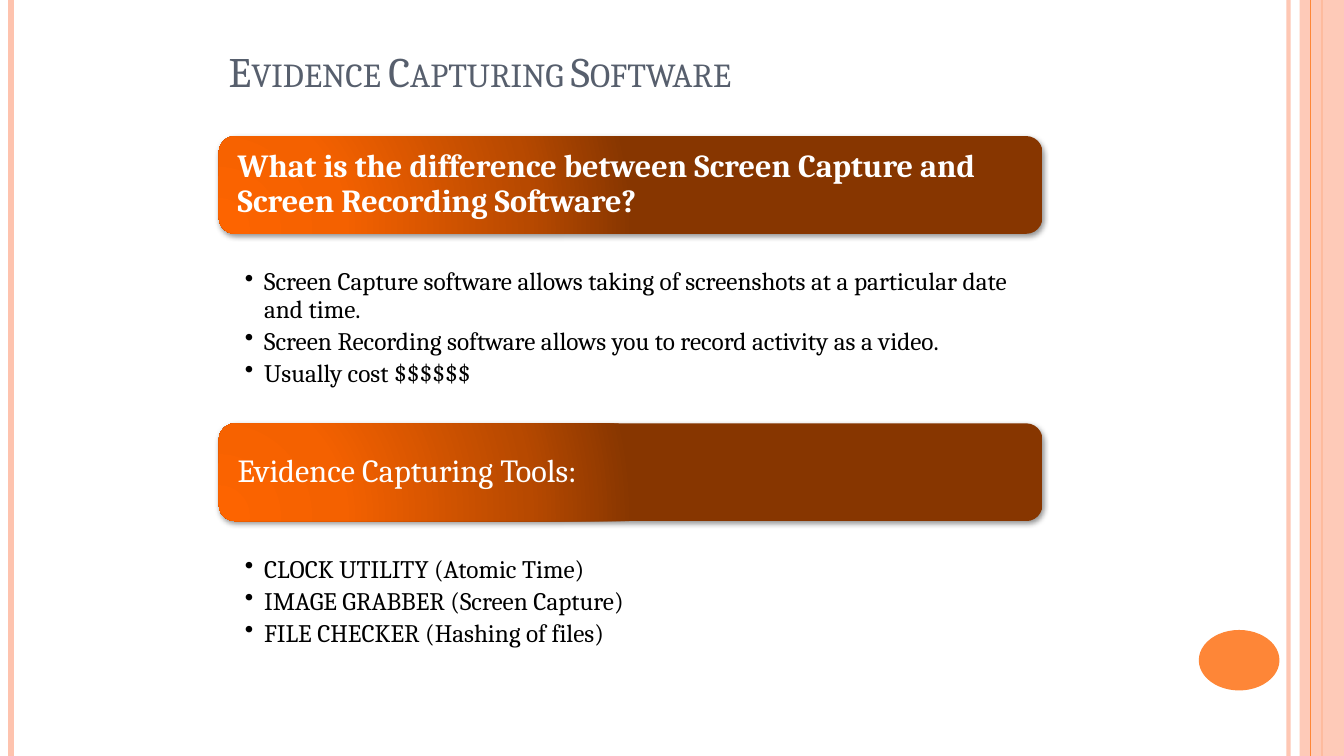
from lxml.etree import SubElement
from pptx import Presentation
from pptx.dml.color import RGBColor
from pptx.enum.shapes import MSO_CONNECTOR, MSO_SHAPE
from pptx.enum.text import MSO_ANCHOR, PP_ALIGN
from pptx.oxml import parse_xml
from pptx.oxml.ns import nsdecls, qn
from pptx.util import Pt

EMU_PER_PX = 9144  # 100 px to the inch
SLIDE_W, SLIDE_H = 1333, 750
COLUMN_LEFT, COLUMN_W = 217, 817
BANNER_H = 97
FONT = "Cambria"

PEACH = RGBColor(0xFE, 0xC3, 0xAE)
ORANGE = RGBColor(0xFE, 0x86, 0x37)
SLATE = RGBColor(0x57, 0x5F, 0x6D)
WHITE = RGBColor(0xFF, 0xFF, 0xFF)
BLACK = RGBColor(0x00, 0x00, 0x00)
BANNER_STOPS = [(0, "FD6400"), (30, "F46100"), (75, "B74900"), (100, "873600")]

SECTIONS = [
    (135, "What is the difference between Screen Capture and Screen Recording Software?", True, 187, [
        "Screen Capture software allows taking of screenshots at a particular date and time.",
        "Screen Recording software allows you to record activity as a video.",
        "Usually cost $$$$$$",
    ]),
    (420, "Evidence Capturing Tools:", False, 133, [
        "CLOCK UTILITY (Atomic Time)",
        "IMAGE GRABBER (Screen Capture)",
        "FILE CHECKER (Hashing of files)",
    ]),
]


def px(*lengths):
    return [length * EMU_PER_PX for length in lengths]


def set_alpha(fill_parent, percent):
    """Make the solid fill found under an element partly transparent."""
    color = fill_parent.find(qn("a:solidFill"))[0]
    SubElement(color, qn("a:alpha")).set("val", str(percent * 1000))


def set_insets(frame, left, top, right, bottom):
    frame.margin_left, frame.margin_top, frame.margin_right, frame.margin_bottom = px(
        left, top, right, bottom)


def style_paragraph(paragraph, size, color, bold=False):
    paragraph.alignment = PP_ALIGN.LEFT
    font = paragraph.font
    font.name, font.size, font.bold = FONT, Pt(size), bold
    font.color.rgb = color


def add_rule(slide, x, color, width, alpha=None):
    """Draw a full-height vertical line."""
    rule = slide.shapes.add_connector(MSO_CONNECTOR.STRAIGHT, *px(x, 0, x, SLIDE_H))
    rule.line.color.rgb = color
    rule.line.width = Pt(width)
    properties = rule._element.spPr
    SubElement(properties, qn("a:effectLst"))
    if alpha:
        set_alpha(properties.find(qn("a:ln")), alpha)


def add_plain_shape(slide, kind, box, color, alpha=None):
    shape = slide.shapes.add_shape(kind, *px(*box))
    shape.fill.solid()
    shape.fill.fore_color.rgb = color
    shape.line.fill.background()
    shape.shadow.inherit = False
    if alpha:
        set_alpha(shape._element.spPr, alpha)
    return shape


def add_banner_glow(banner):
    """Give a banner its radial gradient and soft drop shadow."""
    stops = "".join(
        f'<a:gs pos="{position * 1000}"><a:srgbClr val="{color}"/></a:gs>'
        for position, color in BANNER_STOPS)
    gradient = parse_xml(
        f'<a:gradFill {nsdecls("a")} rotWithShape="1"><a:gsLst>{stops}</a:gsLst>'
        '<a:path path="circle"><a:fillToRect l="5000" t="100000" r="120000" b="10000"/>'
        '</a:path></a:gradFill>')
    shadow = parse_xml(
        f'<a:outerShdw {nsdecls("a")} blurRad="{Pt(4)}" dist="{Pt(1.6)}" dir="5400000" '
        'rotWithShape="0"><a:srgbClr val="000000"><a:alpha val="42000"/></a:srgbClr>'
        '</a:outerShdw>')
    properties = banner._element.spPr
    properties.replace(properties.find(qn("a:solidFill")), gradient)
    properties.find(qn("a:effectLst")).append(shadow)


def add_banner(slide, top, heading, bold):
    banner = add_plain_shape(slide, MSO_SHAPE.ROUNDED_RECTANGLE,
                             (COLUMN_LEFT, top, COLUMN_W, BANNER_H), ORANGE)
    add_banner_glow(banner)
    frame = banner.text_frame
    frame.word_wrap = True
    frame.vertical_anchor = MSO_ANCHOR.MIDDLE
    set_insets(frame, 14, 10, 14, 10)
    paragraph = frame.paragraphs[0]
    paragraph.text = heading
    paragraph.line_spacing = 0.9
    style_paragraph(paragraph, 23, WHITE, bold)


def add_text_box(slide, box, insets):
    frame = slide.shapes.add_textbox(*px(*box)).text_frame
    frame.word_wrap = True
    set_insets(frame, *insets)
    return frame


def add_bullets(slide, top, height, items):
    frame = add_text_box(slide, (COLUMN_LEFT, top, COLUMN_W, height), (26, 35, 18, 3))
    for index, item in enumerate(items):
        paragraph = frame.add_paragraph() if index else frame.paragraphs[0]
        paragraph.text = item
        paragraph.line_spacing = 0.9
        paragraph.space_after = Pt(3.6)
        style_paragraph(paragraph, 18, BLACK)
        properties = paragraph._p.get_or_add_pPr()
        indent, = px(19)
        properties.set("marL", str(indent))
        properties.set("indent", str(-indent))
        bullet = parse_xml(f'<a:buChar {nsdecls("a")} char="•"/>')
        properties.find(qn("a:defRPr")).addprevious(bullet)


def add_title(slide, title):
    frame = add_text_box(slide, (COLUMN_LEFT, 30, COLUMN_W, 70), (10, 5, 10, 5))
    frame.vertical_anchor = MSO_ANCHOR.BOTTOM
    paragraph = frame.paragraphs[0]
    paragraph.text = title
    style_paragraph(paragraph, 30, SLATE)
    paragraph.runs[0]._r.get_or_add_rPr().set("cap", "small")


def add_side_trim(slide):
    add_rule(slide, 1278, PEACH, 3, alpha=93)
    add_rule(slide, 11, PEACH, 4.5)
    add_rule(slide, 1311, ORANGE, 1.5)
    add_plain_shape(slide, MSO_SHAPE.RECTANGLE, (1289, 0, 44, SLIDE_H), PEACH, alpha=87)
    add_rule(slide, 1300, ORANGE, 0.75)
    add_plain_shape(slide, MSO_SHAPE.OVAL, (1189, 625, 80, 60), ORANGE)


def main():
    deck = Presentation()
    deck.slide_width, deck.slide_height = px(SLIDE_W, SLIDE_H)
    slide = deck.slides.add_slide(deck.slide_layouts[6])
    add_side_trim(slide)
    add_title(slide, "Evidence Capturing Software")
    for top, heading, bold, list_height, items in SECTIONS:
        add_banner(slide, top, heading, bold)
        add_bullets(slide, top + BANNER_H, list_height, items)
    deck.save("out.pptx")


if __name__ == "__main__":
    main()
